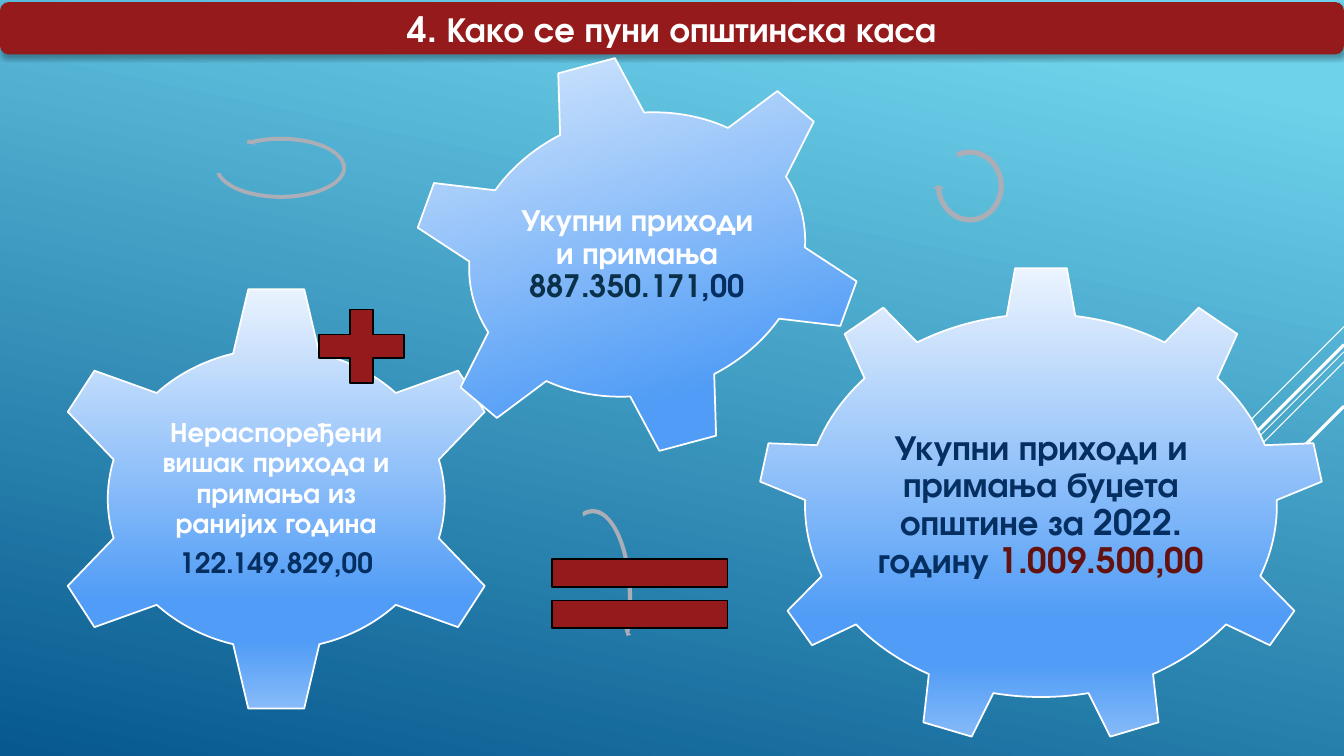
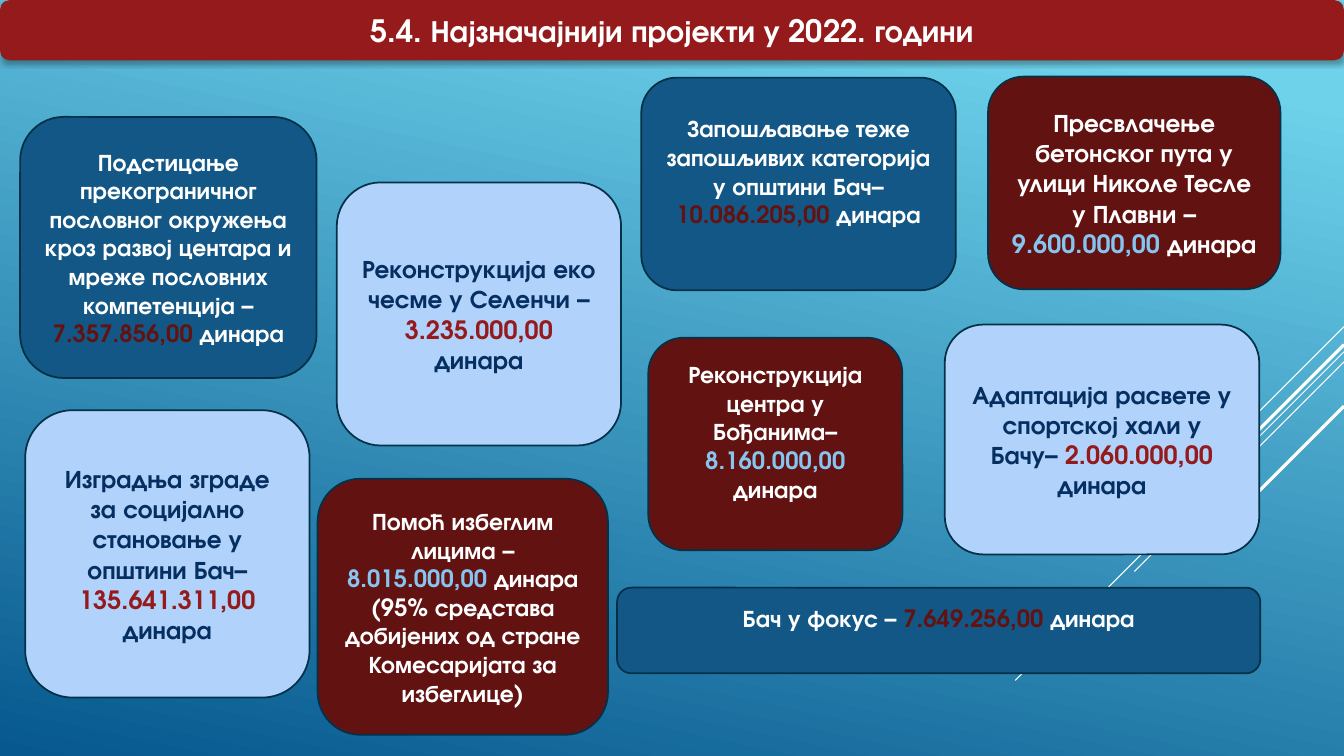
import pptx
import pptx.util
import pptx.dml.color
import pptx.enum.shapes
import pptx.enum.text
import pptx.oxml
import pptx.oxml.ns

Inches = pptx.util.Inches
Pt = pptx.util.Pt
KIND = pptx.enum.shapes.MSO_SHAPE
FONT = "TeX Gyre Adventor"
HEX = {
    "white": "FFFFFF", "black": "000000", "red": "941A1B", "wine": "631212",
    "navy": "052F61", "ink": "0A304A", "edge": "043148", "blue": "125785",
    "pale": "B1D3FB", "sky": "86C5EF", "gray": "ABADB7",
}
SKY = [(10, "6ED2EB"), (100, "06588E")]
STEEL = [(0, "ECF4FE"), (74, "509CF6"), (83, "509CF6"), (100, "8BBDF9")]
RAYS = [
    (3.24, 1, 0.75), (3.49, 3.26, 0.75), (3.59, 2.08, 0.75),
    (3.42, 1.91, 2.25), (4.03, 1.39, 2.25),
]
STYLES = {
    "pale": ("navy", "red"),
    "wine": ("white", "sky"),
    "blue": ("white", "wine"),
}
CARDS = [
    ((3.34, 1.81, 2.82, 2.61), "pale", 18, 0, "Реконструкција еко чесме у Селенчи – ", "3.235.000,00", " динара"),
    ((3.15, 4.75, 2.88, 2.54), "wine", 17, 0, "Помоћ избеглим лицима – ", "8.015.000,00",
     " динара (95% средстава добијених од стране Комесаријата за избеглице)"),
    ((0.25, 4.07, 2.82, 2.85), "pale", 18, 0, "Изградња зграде за социјално становање у општини Бач– ",
     "135.641.311,00", " динара"),
    ((9.8, 0.76, 2.9, 2.11), "wine", 18, 0, "Пресвлачење бетонског пута у улици Николе Тесле у Плавни – ",
     "9.600.000,00", " динара"),
    ((6.43, 3.35, 2.52, 2.11), "wine", 17, 0.25, "Реконструкција центра у Бођанима– ", "8.160.000,00", " динара"),
    ((9.37, 3.22, 3.12, 2.28), "pale", 18, 0, "Адаптација расвете у спортској хали у Бачу– ",
     "2.060.000,00", " динара"),
    ((0.2, 1.16, 2.94, 2.59), "blue", 17, 0,
     "Подстицање прекограничног пословног окружења кроз развој центара и мреже пословних компетенција – ",
     "7.357.856,00", " динара"),
    ((6.36, 0.77, 3.12, 2.11), "blue", 17, 0.25, "Запошљавање теже запошљивих категорија у општини Бач– ",
     "10.086.205,00", " динара"),
    ((6.12, 5.83, 6.38, 0.85), "blue", 17, 0.25, "Бач у фокус – ", "7.649.256,00", " динара"),
]


def rgb(name):
    """Return the named colour."""
    return pptx.dml.color.RGBColor.from_string(HEX[name])


def add(parent, tag, **attrs):
    """Append a drawing element to its parent."""
    node = pptx.oxml.parse_xml(f"<a:{tag} {pptx.oxml.ns.nsdecls('a')}/>")
    for key, value in attrs.items():
        node.set(key, str(value))
    parent.append(node)
    return node


def find(owner, tag):
    """Find the first drawing element of this tag in an owner."""
    return owner.element.find(".//" + pptx.oxml.ns.qn("a:" + tag))


def blend(owner, fill, stops, angle):
    """Give a fill a clockwise linear gradient."""
    fill.gradient()
    fill.gradient_angle = 360 - angle
    ramp = find(owner, "gsLst")
    for old in list(ramp):
        ramp.remove(old)
    for place, color in stops:
        add(add(ramp, "gs", pos=place * 1000), "srgbClr", val=color)


def form(slide, kind, box, fill=None, edge=None):
    """Add a preset shape with a plain fill and edge."""
    shape = slide.shapes.add_shape(kind, *map(Inches, box))
    shape.shadow.inherit = False
    if fill:
        shape.fill.solid()
        shape.fill.fore_color.rgb = rgb(fill)
    if edge:
        shape.line.color.rgb = rgb(edge)
        shape.line.width = Pt(1.25)
    else:
        shape.line.fill.background()
    return shape


def write(shape, size, *paras):
    """Write centred bold paragraphs made of (text, colour) runs."""
    frame = shape.text_frame
    frame.word_wrap = True
    frame.vertical_anchor = pptx.enum.text.MSO_ANCHOR.MIDDLE
    for i, runs in enumerate(paras):
        para = frame.add_paragraph() if i else frame.paragraphs[0]
        para.alignment = pptx.enum.text.PP_ALIGN.CENTER
        para.font.name, para.font.size, para.font.bold = FONT, Pt(size), True
        for text, color in runs:
            run = para.add_run()
            run.text = text
            run.font.color.rgb = rgb(color)
    return frame


def start(deck, box, title, size):
    """Add a slide with its rays and title band."""
    slide = deck.slides.add_slide(deck.slide_layouts[6])
    right = 13.33
    for y, run, width in RAYS:
        ray = slide.shapes.add_connector(
            pptx.enum.shapes.MSO_CONNECTOR.STRAIGHT,
            *map(Inches, (right, y, right - run, y + run)))
        ray.line.color.rgb = rgb("white")
        ray.line.width = Pt(width)
        add(ray.element.spPr, "effectLst")
    band = form(slide, KIND.ROUNDED_RECTANGLE, box, "red")
    glow = add(find(band, "effectLst"), "outerShdw", blurRad=Pt(3.5),
               dist=Pt(2.2), dir=90 * 60000, algn="ctr", rotWithShape=0)
    add(add(glow, "srgbClr", val=HEX["black"]), "alpha", val=32000)
    write(band, size, [(title, "white")])
    return slide


def gear(slide, kind, box, area, size, *paras, turn=0):
    """Add a gear with a text area at its centre."""
    left, top, width, height = box
    wheel = form(slide, kind, box, edge="white")
    blend(wheel, wheel.fill, STEEL, 90)
    wheel.rotation = turn
    wide, high = area
    label = slide.shapes.add_textbox(*map(Inches, (
        left + (width - wide) / 2, top + (height - high) / 2, wide, high)))
    frame = write(label, size, *paras)
    frame.margin_left = frame.margin_right = Inches(0.03)
    frame.margin_top = frame.margin_bottom = Inches(0.03)
    for para in frame.paragraphs:
        para.line_spacing = 0.9
        para.space_after = Pt(0.35 * size)


def arc(slide, kind, box, *bends):
    """Add a curved arrow with its adjustments."""
    shape = form(slide, kind, box, "gray")
    for i, bend in enumerate(bends):
        shape.adjustments[i] = bend


def card(slide, box, style, size, lift, lead, total, tail):
    """Add a project card, its text raised by a deeper bottom margin."""
    body, accent = STYLES[style]
    shape = form(slide, KIND.ROUNDED_RECTANGLE, box, style, "edge")
    frame = write(shape, size, [(lead, body), (total, accent), (tail, body)])
    frame.margin_bottom = Inches(0.05 + lift)


def funds(deck):
    """Build the slide that adds up the budget."""
    slide = start(deck, (0, 0.02, 13.33, 0.52), "4. Како се пуни општинска каса", 25)
    gear(slide, KIND.GEAR_9, (7.51, 2.64, 5.63, 4.75), (3.49, 2.44), 25,
         [("Укупни приходи и примања буџета општине за 2022. годину ", "navy"),
          ("1.009.500,00", "wine")])
    gear(slide, KIND.GEAR_6, (0.43, 2.82, 4.62, 4.26), (2.37, 2.1), 20,
         [("Нераспоређени вишак прихода и примања из ранијих година", "white")],
         [("122.149.829,00", "navy")])
    gear(slide, KIND.GEAR_6, (4.04, 0.54, 4.56, 3.97), (2.49, 2.3), 22,
         [("Укупни приходи и примања ", "white"), ("887.350.171", "ink"), (",00", "navy")],
         turn=345)
    arc(slide, KIND.CIRCULAR_ARROW, (5.46, 5.02, 0.84, 1.85), 0.05, 2.99, 25.46, 157.98, 0.06)
    arc(slide, KIND.CIRCULAR_ARROW, (9.25, 1.45, 0.74, 0.79), 0.07, 4.3, 104.89, 148.38, 0.08)
    arc(slide, KIND.LEFT_CIRCULAR_ARROW, (2.11, 1.33, 1.35, 0.67), 0.06, 3.94, 133.14, 105.08, 0.07)
    form(slide, KIND.MATH_PLUS, (3.01, 2.94, 1.15, 0.99), "red", "black")
    form(slide, KIND.MATH_EQUAL, (5.16, 5.31, 2.37, 1.16), "red", "black")


def works(deck):
    """Build the slide of project cards."""
    slide = start(deck, (0, 0, 13.33, 0.6), "5.4. Најзначајнији пројекти у 2022. години", 22)
    for item in CARDS:
        card(slide, *item)


def main():
    """Build and save the deck."""
    deck = pptx.Presentation()
    deck.slide_width, deck.slide_height = Inches(13.33), Inches(7.5)
    master = deck.slide_master
    blend(master, master.background.fill, SKY, 102)
    funds(deck)
    works(deck)
    deck.save("out.pptx")


if __name__ == "__main__":
    main()
